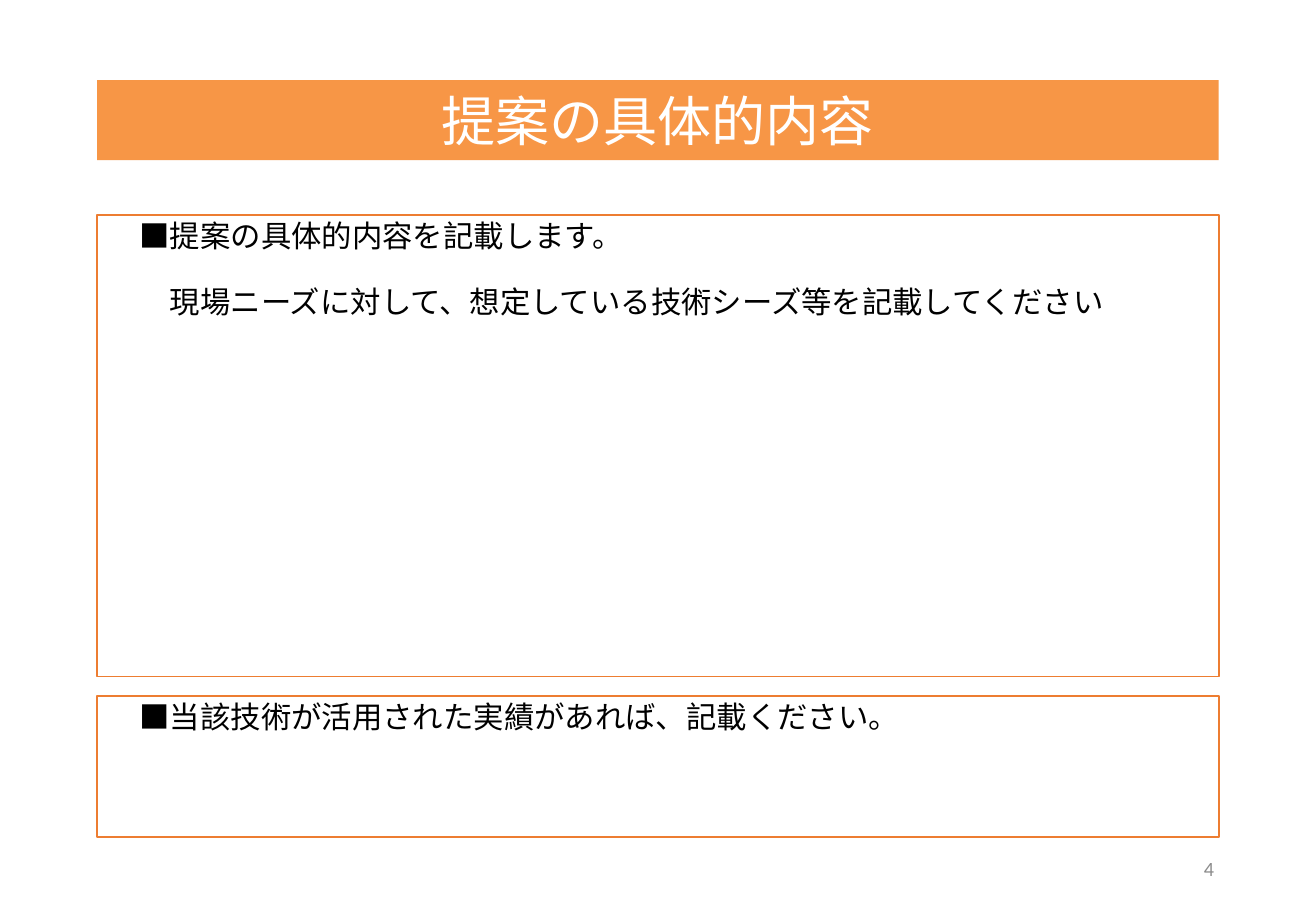
from pptx import Presentation
from pptx.dml.color import RGBColor
from pptx.enum.shapes import MSO_SHAPE
from pptx.enum.text import MSO_ANCHOR, MSO_AUTO_SIZE, PP_ALIGN
from pptx.util import Inches, Pt
from lxml import etree

RECT = MSO_SHAPE.RECTANGLE
TOP, MIDDLE = MSO_ANCHOR.TOP, MSO_ANCHOR.MIDDLE
LEFT, CENTER, RIGHT = PP_ALIGN.LEFT, PP_ALIGN.CENTER, PP_ALIGN.RIGHT

ORANGE = RGBColor(0xF7, 0x96, 0x46)
BORDER = RGBColor(0xED, 0x7D, 0x31)
WHITE = RGBColor(0xFF, 0xFF, 0xFF)
BLACK = RGBColor(0, 0, 0)
GRAY = RGBColor(0x8C, 0x8C, 0x8C)
JP_FONT, LATIN_FONT = "Noto Sans CJK JP", "Calibri"
NS = "http://schemas.openxmlformats.org/drawingml/2006/main"

# Content
TITLE = "提案の具体的内容"
PAGE_NUMBER = "4"
# Each box: top, height, lines
BOXES = [
    (1.77, 3.8, ["■提案の具体的内容を記載します。",
                 "現場ニーズに対して、想定している技術シーズ等を記載してください"]),
    (5.73, 1.16, ["■当該技術が活用された実績があれば、記載ください。"]),
]

# Layout: one full-width character is 18 pt, or 0.25 in
BOX_LEFT, BOX_WIDTH = 0.8, 9.23
CHAR = 0.25


def place(sp, left, top, width, height):
    sp.left, sp.top = Inches(left), Inches(top)
    sp.width, sp.height = Inches(width), Inches(height)


def style(p, size, color, align, font=JP_FONT):
    p.alignment = align
    for r in p.runs:
        r.font.size = Pt(size)
        r.font.color.rgb = color
        r.font.name = font
        ea = etree.SubElement(r.font._element, f"{{{NS}}}ea")
        ea.set("typeface", font)


prs = Presentation()
prs.slide_width, prs.slide_height = Inches(10.83), Inches(7.5)
s = prs.slides.add_slide(prs.slide_layouts[5])

# Title band
title = s.shapes.title
place(title, BOX_LEFT, 0.66, BOX_WIDTH, 0.66)
title.fill.solid()
title.fill.fore_color.rgb = ORANGE
tf = title.text_frame
tf.text = TITLE
tf.auto_size = MSO_AUTO_SIZE.NONE
tf.vertical_anchor = MIDDLE
tf.margin_left = tf.margin_right = tf.margin_top = tf.margin_bottom = 0
style(tf.paragraphs[0], 32, WHITE, CENTER)

# Outlined boxes; each further line is indented by one more character
for top, height, lines in BOXES:
    sp = s.shapes.add_shape(RECT, Inches(BOX_LEFT), Inches(top),
                            Inches(BOX_WIDTH), Inches(height))
    sp.shadow.inherit = False
    sp.fill.solid()
    sp.fill.fore_color.rgb = WHITE
    sp.line.color.rgb = BORDER
    sp.line.width = Pt(1)
    tf = sp.text_frame
    tf.word_wrap = True
    tf.vertical_anchor = TOP
    for i, line in enumerate(lines):
        p = tf.paragraphs[0] if i == 0 else tf.add_paragraph()
        p.text = line
        p.line_spacing = 0.9
        p.space_before = Pt(20 * i)
        p._p.get_or_add_pPr().set("marL", str(Inches(CHAR * (i + 1))))
        style(p, 18, BLACK, LEFT)

# Page number
tb = s.shapes.add_textbox(Inches(7.65), Inches(6.95), Inches(2.44), Inches(0.4))
tf = tb.text_frame
tf.word_wrap = True
tf.vertical_anchor = MIDDLE
tf.text = PAGE_NUMBER
style(tf.paragraphs[0], 12, GRAY, RIGHT, LATIN_FONT)

prs.save("out.pptx")
